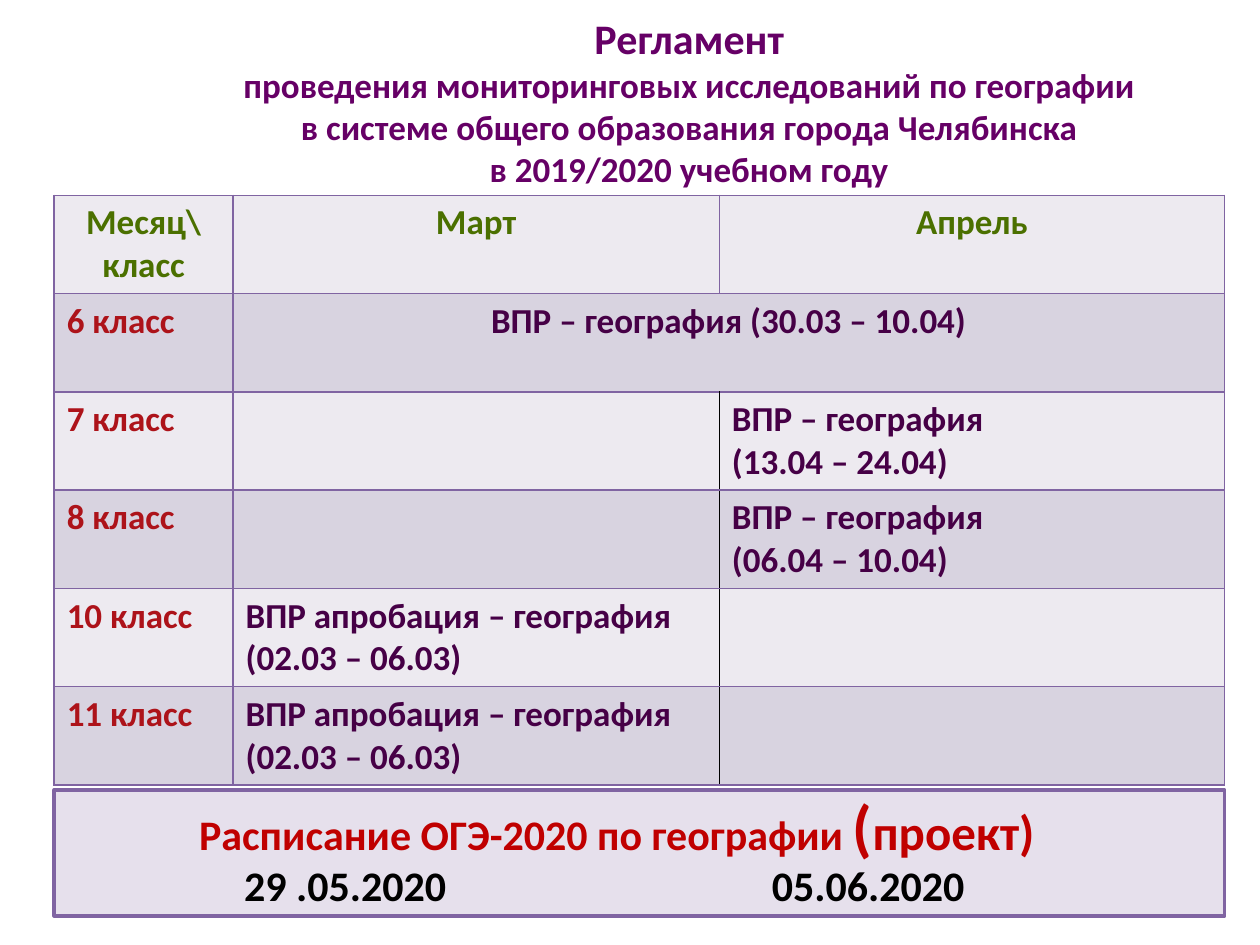
from lxml import etree
from pptx import Presentation
from pptx.dml.color import RGBColor
from pptx.enum.shapes import MSO_SHAPE as Preset
from pptx.enum.text import MSO_ANCHOR as Anchor, PP_ALIGN as Align
from pptx.oxml.ns import qn
from pptx.util import Inches, Pt

COLORS = {
    "title": "660066", "heading": "4B7000", "grade": "AD131A", "exam": "460046",
    "light": "EDEAF0", "dark": "D8D3E0", "border": "8064A2", "panel": "E6E0EC",
    "accent": "C00000", "black": "000000",
}
FONT = "Calibri"
MARCH, APRIL = 1, 2

HEADINGS = [["Месяц\\", "класс"], ["Март"], ["Апрель"]]
TRIAL = ["ВПР апробация – география (02.03 – 06.03)"]
# Grade, column of the exam, exam lines
SCHEDULE = [
    ("6 класс", MARCH, ["ВПР – география (30.03 – 10.04)"]),
    ("7 класс", APRIL, ["ВПР – география", "(13.04 – 24.04)"]),
    ("8 класс", APRIL, ["ВПР – география", "(06.04 – 10.04)"]),
    ("10 класс", MARCH, TRIAL),
    ("11 класс", MARCH, TRIAL),
]
SPANNING_ROW = 1


def color(name):
    return RGBColor.from_string(COLORS[name])


def write(frame, lines, color_name, align=Align.CENTER):
    """Each line is a list of (text, size) runs."""
    for index, runs in enumerate(lines):
        paragraph = frame.paragraphs[0] if index == 0 else frame.add_paragraph()
        paragraph.alignment = align
        for text, size in runs:
            run = paragraph.add_run()
            run.text = text
            run.font.name = FONT
            run.font.size = Pt(size)
            run.font.bold = True
            run.font.color.rgb = color(color_name)


def add_label(slide, left, top, width, height, lines, color_name):
    frame = slide.shapes.add_textbox(
        Inches(left), Inches(top), Inches(width), Inches(height)).text_frame
    frame.word_wrap = True
    write(frame, lines, color_name)
    return frame


def set_borders(cell, **sides):
    properties = cell._tc.get_or_add_tcPr()
    for position, side in enumerate(("L", "R", "T", "B")):
        line = etree.Element(qn(f"a:ln{side}"), w=str(Pt(1)))
        fill = etree.SubElement(line, qn("a:solidFill"))
        etree.SubElement(fill, qn("a:srgbClr"), val=COLORS[sides.get(side, "border")])
        properties.insert(position, line)


def add_title(slide, left, top, width, height):
    lines = [
        [("Регламент", 24)],
        [("проведения мониторинговых исследований по географии", 20)],
        [("в системе общего образования города Челябинска", 20)],
        [("в 2019/2020 учебном году", 20)],
    ]
    frame = add_label(slide, left, top, width, height, lines, "title")
    frame.margin_top = frame.margin_bottom = 0
    frame.vertical_anchor = Anchor.MIDDLE


def add_schedule(slide, left, top, width, height):
    row_count = len(SCHEDULE) + 1
    table = slide.shapes.add_table(
        row_count, 3, Inches(left), Inches(top), Inches(width), Inches(height)).table
    first, second = 1.42, 3.86
    for column, size in zip(table.columns, (first, second, width - first - second)):
        column.width = Inches(size)

    # Banded fills and borders; a black rule divides the months
    for row_index, row in enumerate(table.rows):
        row.height = Inches(height / row_count)
        divider = "black" if row_index > SPANNING_ROW else "border"
        for column_index, cell in enumerate(row.cells):
            cell.fill.solid()
            cell.fill.fore_color.rgb = color("dark" if row_index % 2 else "light")
            sides = {MARCH: {"R": divider}, APRIL: {"L": divider}}
            set_borders(cell, **sides.get(column_index, {}))
    table.cell(SPANNING_ROW, MARCH).merge(table.cell(SPANNING_ROW, APRIL))

    # Wording
    def fill_cell(row_index, column_index, texts, color_name, align):
        write(table.cell(row_index, column_index).text_frame,
              [[(text, 20)] for text in texts], color_name, align)

    for column_index, texts in enumerate(HEADINGS):
        fill_cell(0, column_index, texts, "heading", Align.CENTER)
    for row_index, (grade, month, texts) in enumerate(SCHEDULE, start=1):
        align = Align.CENTER if row_index == SPANNING_ROW else Align.LEFT
        fill_cell(row_index, 0, [grade], "grade", Align.LEFT)
        fill_cell(row_index, month, texts, "exam", align)


def add_exam_panel(slide, left, top, width, height):
    panel = slide.shapes.add_shape(
        Preset.RECTANGLE, Inches(left), Inches(top), Inches(width), Inches(height))
    panel.shadow.inherit = False
    panel.fill.solid()
    panel.fill.fore_color.rgb = color("panel")
    panel.line.color.rgb = color("border")
    panel.line.width = Pt(2)

    heading = [("Расписание ОГЭ-2020 по географии ", 24), ("(", 36), ("проект)", 28)]
    labels = [
        (1.01, -0.07, 6.91, 0.71, heading, "accent"),
        (1.4, 0.5, 1.82, 0.5, [("29 .05.2020", 24)], "black"),
        (5.59, 0.5, 1.74, 0.5, [("05.06.2020", 24)], "black"),
    ]
    for x, y, label_width, label_height, runs, color_name in labels:
        frame = add_label(slide, left + x, top + y, label_width, label_height,
                          [runs], color_name)
        frame.word_wrap = False


def main():
    presentation = Presentation()
    presentation.slide_width = Inches(10)
    presentation.slide_height = Inches(7.5)
    slide = presentation.slides.add_slide(presentation.slide_layouts[6])
    add_title(slide, 1.22, 0.09, 8.5, 1.42)
    add_schedule(slide, 0.43, 1.55, 9.29, 4.68)
    add_exam_panel(slide, 0.43, 6.27, 9.29, 1)
    presentation.save("out.pptx")


if __name__ == "__main__":
    main()
